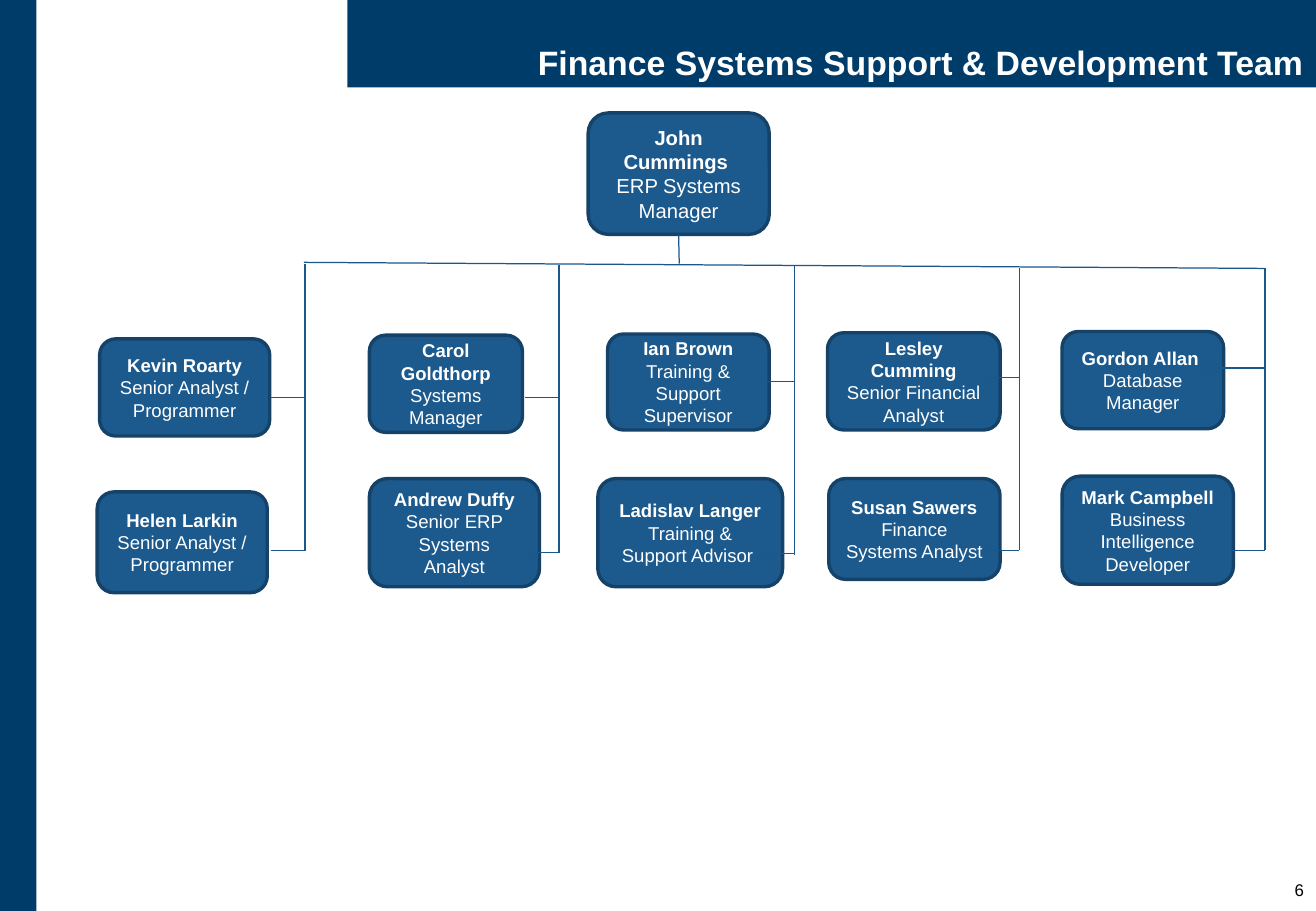
from dataclasses import dataclass

from lxml.etree import SubElement
from pptx import Presentation
from pptx.dml.color import RGBColor
from pptx.enum.shapes import MSO_CONNECTOR, MSO_SHAPE
from pptx.enum.text import MSO_ANCHOR, PP_ALIGN
from pptx.oxml.ns import qn
from pptx.util import Inches, Pt


@dataclass(frozen=True)
class Theme:
    font: str = "Arial"
    navy: str = "003C69"
    card: str = "1C598C"
    border: str = "154268"
    link: str = "19578C"
    white: str = "FFFFFF"
    black: str = "000000"
    title_size: int = 20
    manager_size: int = 12
    staff_size: int = 11
    number_size: int = 10
    border_width: float = 2
    link_width: float = 0.75


@dataclass(frozen=True)
class Member:
    name: str
    role: str
    place: tuple
    link_y: float
    link_length: float = 0.28


@dataclass(frozen=True)
class Branch:
    x: float
    top: float
    bottom: float
    members: tuple


BRANCHES = (
    Branch(2.51, 2.17, 4.54, (
        Member("Kevin Roarty", "Senior Analyst / Programmer", (0.82, 2.79, 1.4, 0.8), 3.27),
        Member("Helen Larkin", "Senior Analyst / Programmer", (0.8, 4.05, 1.4, 0.83), 4.53),
    )),
    Branch(4.6, 2.18, 4.55, (
        Member("Carol Goldthorp", "Systems Manager", (3.04, 2.76, 1.26, 0.8), 3.27),
        Member("Andrew Duffy", "Senior ERP Systems Analyst", (3.04, 3.94, 1.4, 0.89), 4.55),
    )),
    Branch(6.54, 2.18, 4.57, (
        Member("Ian Brown", "Training & Support Supervisor", (5, 2.75, 1.33, 0.79), 3.14),
        Member("Ladislav Langer", "Training & Support Advisor ", (4.92, 3.94, 1.52, 0.89), 4.56),
    )),
    Branch(8.39, 2.21, 4.53, (
        Member("Lesley Cumming", "Senior Financial Analyst", (6.81, 2.74, 1.42, 0.8), 3.11),
        Member("Susan Sawers", "Finance Systems Analyst", (6.82, 3.94, 1.41, 0.83), 4.53),
    )),
    Branch(10.41, 2.21, 4.53, (
        Member("Gordon Allan ", "Database Manager", (8.74, 2.73, 1.33, 0.8), 3.03, 0.54),
        Member("Mark Campbell", "Business Intelligence Developer", (8.74, 3.92, 1.41, 0.89), 4.53),
    )),
)


def write_text(para, text, *, font, size, color, bold=False, align=PP_ALIGN.CENTER):
    para.alignment = align
    span = para.add_run()
    span.text = text
    span.font.name = font
    span.font.size = Pt(size)
    span.font.bold = bold
    span.font.color.rgb = RGBColor.from_string(color)


class TeamChart:
    def __init__(self, page, theme):
        self.page = page
        self.theme = theme

    def block(self, place, fill, kind=MSO_SHAPE.RECTANGLE):
        box = self.page.shapes.add_shape(kind, *map(Inches, place))
        box.shadow.inherit = False
        box.fill.solid()
        box.fill.fore_color.rgb = RGBColor.from_string(fill)
        box.line.fill.background()
        box.text_frame.word_wrap = True
        return box

    def title(self, text, place):
        frame = self.block(place, self.theme.navy).text_frame
        frame.vertical_anchor = MSO_ANCHOR.BOTTOM
        frame.margin_left = Inches(0.08)
        frame.margin_top = frame.margin_bottom = Inches(0.04)
        para = frame.paragraphs[0]
        para.line_spacing = 0.9
        write_text(para, text, font=self.theme.font, size=self.theme.title_size,
                   color=self.theme.white, bold=True, align=PP_ALIGN.RIGHT)

    def page_number(self, text, place):
        frame = self.page.shapes.add_textbox(*map(Inches, place)).text_frame
        frame.word_wrap = True
        write_text(frame.paragraphs[0], text, font=self.theme.font,
                   size=self.theme.number_size, color=self.theme.black, align=PP_ALIGN.RIGHT)

    def card(self, name, role, place, size):
        box = self.block(place, self.theme.card, MSO_SHAPE.ROUNDED_RECTANGLE)
        box.line.color.rgb = RGBColor.from_string(self.theme.border)
        box.line.width = Pt(self.theme.border_width)
        frame = box.text_frame
        frame.vertical_anchor = MSO_ANCHOR.MIDDLE
        style = {"font": self.theme.font, "size": size, "color": self.theme.white}
        write_text(frame.paragraphs[0], name, bold=True, **style)
        write_text(frame.add_paragraph(), role, **style)
        return box

    def link(self, start, end):
        line = self.page.shapes.add_connector(
            MSO_CONNECTOR.STRAIGHT, *map(Inches, (*start, *end)))
        line.line.color.rgb = RGBColor.from_string(self.theme.link)
        line.line.width = Pt(self.theme.link_width)
        SubElement(line._element.spPr, qn("a:effectLst"))
        return line

    def branch(self, branch):
        for member in branch.members:
            self.card(member.name, member.role, member.place, self.theme.staff_size)
        self.link((branch.x, branch.bottom), (branch.x, branch.top))
        for member in branch.members:
            self.link((branch.x - member.link_length, member.link_y),
                      (branch.x, member.link_y))


def main():
    deck = Presentation()
    deck.slide_width = Inches(10.83)
    deck.slide_height = Inches(7.5)
    page = deck.slides.add_slide(deck.slide_layouts[6])
    theme = Theme()
    chart = TeamChart(page, theme)

    chart.block((0, 0, 0.3, 7.5), theme.navy)
    chart.title("Finance Systems Support & Development Team", (2.86, 0, 7.97, 0.72))
    chart.page_number("6", (9.96, 7.19, 0.87, 0.31))

    manager = chart.card("John Cummings ", "ERP Systems Manager",
                         (4.84, 0.93, 1.49, 1), theme.manager_size)
    chart.link((2.5, 2.16), (10.41, 2.21))
    chart.link((5.59, 1.93), (5.59, 2.17)).begin_connect(manager, 2)
    for branch in BRANCHES:
        chart.branch(branch)

    deck.save("out.pptx")


if __name__ == "__main__":
    main()
